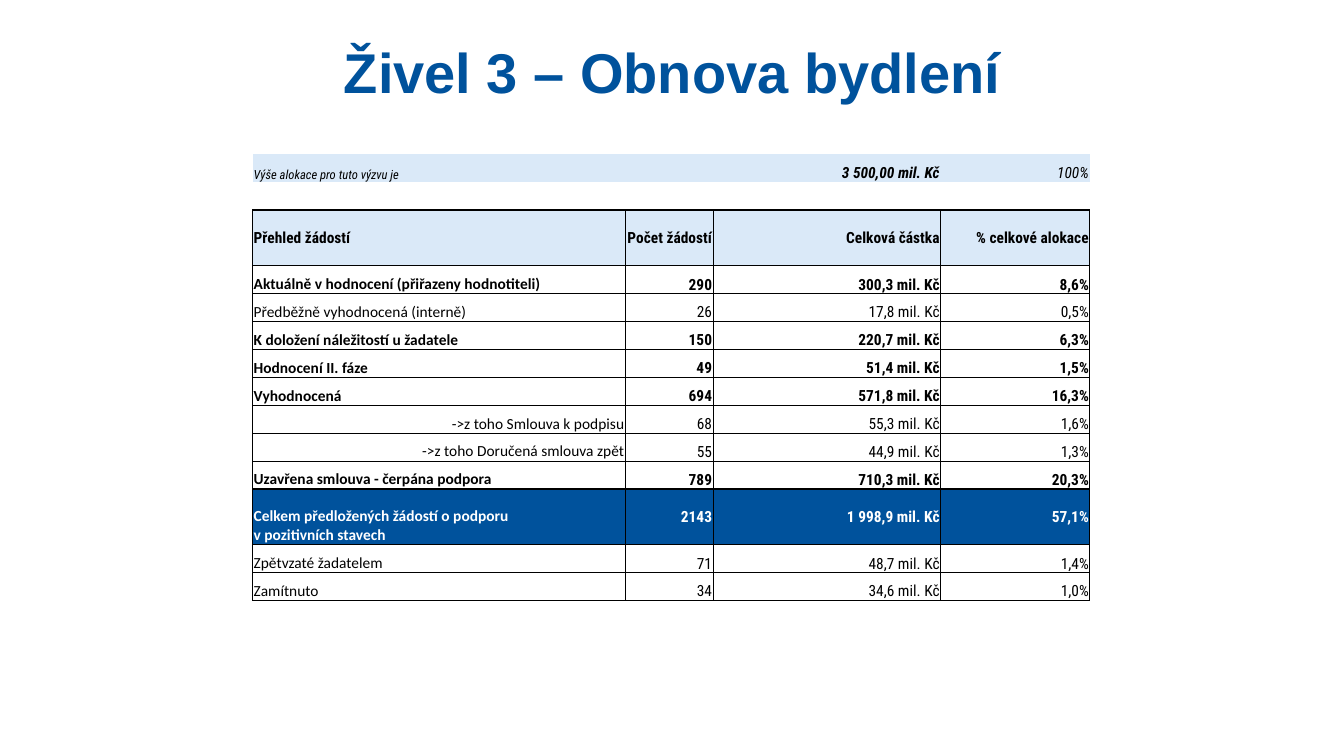
from lxml import etree
from pptx import Presentation
from pptx import util as u
from pptx.dml.color import RGBColor
from pptx.enum import text
from pptx.oxml import ns

BLUE = RGBColor(0x00, 0x52, 0x9C)
PALE = RGBColor(0xDA, 0xE9, 0xF8)
BLACK = RGBColor(0x00, 0x00, 0x00)
WHITE = RGBColor(0xFF, 0xFF, 0xFF)

COLUMNS = (3.7, 0.87, 2.26, 1.48)
ALLOCATION = ("Výše alokace pro tuto výzvu je", "", "3 500,00 mil. Kč", "100%")
HEADINGS = ("Přehled žádostí", "Počet žádostí", "Celková částka", "% celkové alokace")
BOLD, PLAIN, SUB, TOTAL = "bold", "plain", "sub", "total"
REQUESTS = (
    (BOLD, 1, "Aktuálně v hodnocení (přiřazeny hodnotiteli)", "290", "300,3 mil. Kč", "8,6%"),
    (PLAIN, 0.5, "Předběžně vyhodnocená (interně)", "26", "17,8 mil. Kč", "0,5%"),
    (BOLD, 1, "K doložení náležitostí u žadatele", "150", "220,7 mil. Kč", "6,3%"),
    (BOLD, 0.5, "Hodnocení II. fáze", "49", "51,4 mil. Kč", "1,5%"),
    (BOLD, 1, "Vyhodnocená", "694", "571,8 mil. Kč", "16,3%"),
    (SUB, 0.5, "->z toho Smlouva k podpisu", "68", "55,3 mil. Kč", "1,6%"),
    (SUB, 1, "->z toho Doručená smlouva zpět", "55", "44,9 mil. Kč", "1,3%"),
    (BOLD, 1, "Uzavřena smlouva - čerpána podpora", "789", "710,3 mil. Kč", "20,3%"),
    (TOTAL, 1, "Celkem předložených žádostí o podporu\vv pozitivních stavech",
     "2143", "1 998,9 mil. Kč", "57,1%"),
    (PLAIN, 0.5, "Zpětvzaté žadatelem", "71", "48,7 mil. Kč", "1,4%"),
    (PLAIN, 1, "Zamítnuto", "34", "34,6 mil. Kč", "1,0%"),
)


class Deck:
    """Holds the presentation, its style and the current slide."""

    body, label, heading = "Roboto Condensed", "Calibri", "Arial"
    no_style = "{2D5ABB26-0587-4C30-8999-92F81FD0307C}"

    def __init__(self, width, height):
        self.prs = Presentation()
        self.prs.slide_width, self.prs.slide_height = u.Inches(width), u.Inches(height)
        self.slide = self.prs.slides.add_slide(self.prs.slide_layouts[5])

    def box(self, left, top, width, height):
        """Turn shares of the slide into lengths."""
        w, h = self.prs.slide_width, self.prs.slide_height
        return int(left * w), int(top * h), int(width * w), int(height * h)

    def set_words(self, p, words, font, size, color, bold=False, italic=False):
        """Fill a paragraph and format its runs."""
        p.text = words
        for r in p.runs:
            f = r.font
            f.name, f.size, f.bold, f.italic = font, u.Pt(size), bold, italic
            f.color.rgb = color
        if not words:
            etree.SubElement(p._p, ns.qn("a:endParaRPr"), sz=str(size * 100))

    def title(self, words, *shares):
        """Place the title placeholder."""
        sp = self.slide.shapes.title
        sp.left, sp.top, sp.width, sp.height = self.box(*shares)
        tf = sp.text_frame
        tf.word_wrap, tf.auto_size = True, text.MSO_AUTO_SIZE.NONE
        tf.vertical_anchor = text.MSO_ANCHOR.TOP
        p = tf.paragraphs[0]
        p.alignment, p.line_spacing = text.PP_ALIGN.CENTER, 0.9
        self.set_words(p, words, self.heading, 40, BLUE, bold=True)

    def table(self, columns, units, *shares):
        """Add a plain table with proportional columns and rows."""
        left, top, width, height = self.box(*shares)
        frame = self.slide.shapes.add_table(len(units), len(columns), left, top, width, height)
        tbl = frame.table
        tbl.first_row = tbl.horz_banding = False
        tbl._tbl.tblPr.find(ns.qn("a:tableStyleId")).text = self.no_style
        for column, share in zip(tbl.columns, columns):
            column.width = int(width * share / sum(columns))
        for row, unit in zip(tbl.rows, units):
            row.height = int(height * unit / sum(units))
        return tbl

    def borders(self, cell, **widths):
        """Draw cell edges, given in points by side, with 0 for none."""
        tc_pr = cell._tc.get_or_add_tcPr()
        for side in "LRTB":
            points = widths.get(side, 0)
            ln = etree.SubElement(tc_pr, ns.qn("a:ln" + side), w=str(u.Pt(points)))
            if points:
                fill = etree.SubElement(ln, ns.qn("a:solidFill"))
                etree.SubElement(fill, ns.qn("a:srgbClr"), val=str(BLACK))
            else:
                etree.SubElement(ln, ns.qn("a:noFill"))

    def cell(self, cell, words, edges, fill=None, middle=False, right=True,
             font=body, size=11, color=BLACK, bold=False, italic=False):
        """Fill and format one table cell."""
        self.borders(cell, **edges)
        if fill is None:
            cell.fill.background()
        else:
            cell.fill.solid()
            cell.fill.fore_color.rgb = fill
        cell.margin_left = cell.margin_right = cell.margin_top = u.Inches(0.01)
        cell.margin_bottom = 0
        cell.vertical_anchor = text.MSO_ANCHOR.MIDDLE if middle else text.MSO_ANCHOR.BOTTOM
        p = cell.text_frame.paragraphs[0]
        p.alignment = text.PP_ALIGN.RIGHT if right else text.PP_ALIGN.LEFT
        self.set_words(p, words, font, size, color, bold, italic)


def main():
    deck = Deck(13.33, 7.5)
    deck.title("Živel 3 – Obnova bydlení", 0.07, 0.053, 0.86, 0.193)
    units = [1, 1, 2] + [2 if kind == TOTAL else 1 for kind, *_ in REQUESTS]
    tbl = deck.table(COLUMNS, units, 0.188, 0.204, 0.623, 0.591)
    last = len(COLUMNS) - 1

    for c, words in enumerate(ALLOCATION):
        deck.cell(tbl.cell(0, c), words, {}, fill=PALE, right=c > 0,
                  size=11 if c > 1 else 9, bold=c == 2, italic=True)
        deck.cell(tbl.cell(1, c), "", {"B": 1}, size=9)

    above = 1
    for r, (kind, below, *values) in enumerate([("head", 1, *HEADINGS), *REQUESTS], start=2):
        fill = {"head": PALE, TOTAL: BLUE}.get(kind)
        for c, words in enumerate(values):
            edges = {"L": 0.5 if c else 1, "R": 1 if c == last else 0.5, "T": above, "B": below}
            deck.cell(tbl.cell(r, c), words, edges, fill=fill,
                      middle=kind == "head" or (kind == TOTAL and c > 0),
                      right=c > 0 or kind == SUB,
                      font=deck.body if c or kind == "head" else deck.label,
                      color=WHITE if kind == TOTAL else BLACK,
                      bold=kind not in (PLAIN, SUB))
        above = below
    deck.prs.save("out.pptx")


if __name__ == "__main__":
    main()
